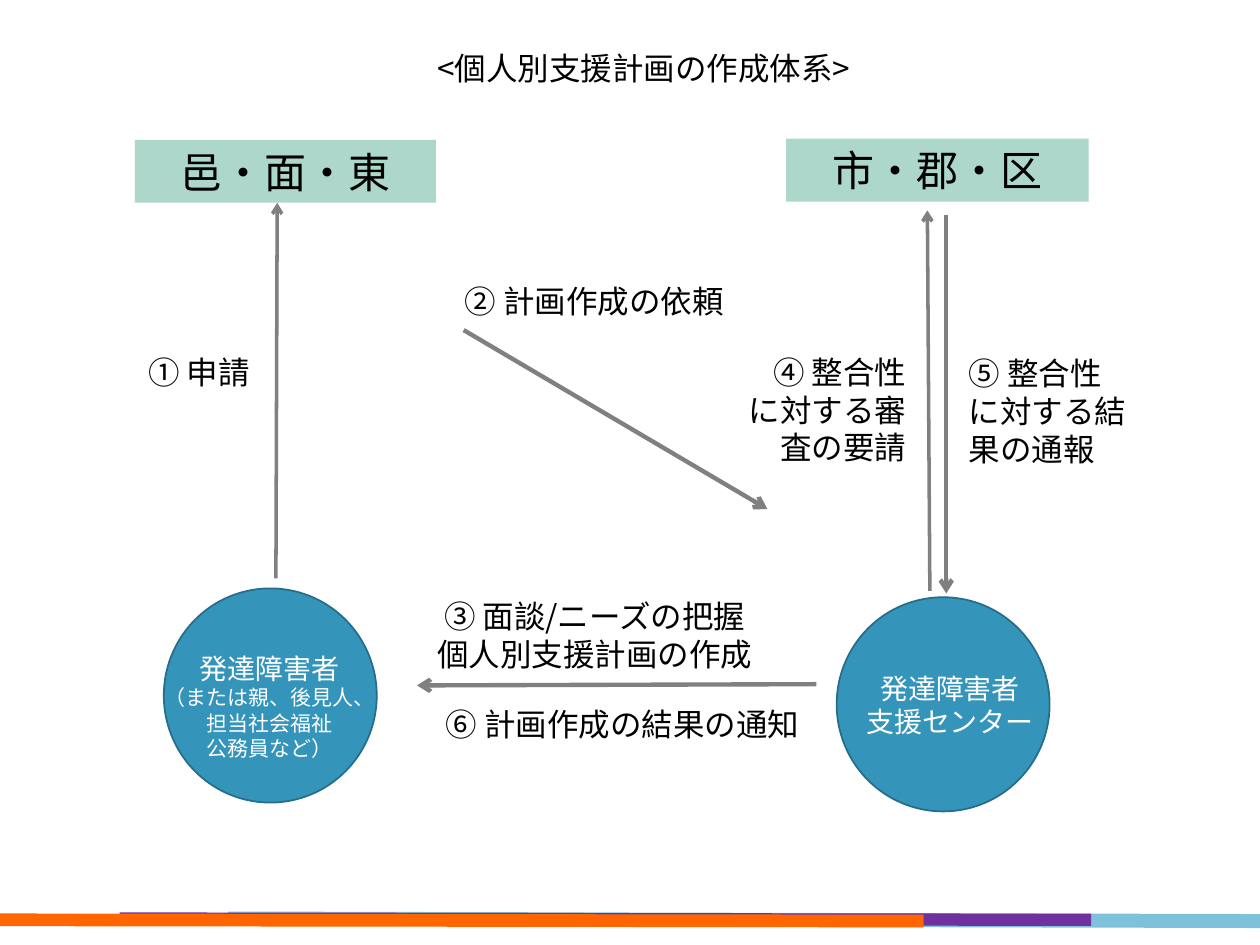
import pptx
import pptx.util
import pptx.dml.color
import pptx.enum.shapes
import pptx.enum.text
import pptx.oxml
import pptx.oxml.ns

PX = 9144
FONT = "Noto Sans CJK JP"
COLORS = {
    "ink": "000000", "paper": "FFFFFF", "arrow": "808080",
    "office": "ACD7CA", "person": "3494BA", "person_edge": "266D8A",
    "sky": "7FC1DB", "purple": "7030A0", "orange": "FF6600",
}
ALIGN = pptx.enum.text.PP_ALIGN
ANCHOR = pptx.enum.text.MSO_ANCHOR
SHAPE = pptx.enum.shapes.MSO_SHAPE


def rgb(name):
    return pptx.dml.color.RGBColor.from_string(COLORS[name])


def emu(*lengths):
    return [length * PX for length in lengths]


class Diagram:
    def __init__(self, slide):
        self.slide = slide

    def set_text(self, frame, lines, sizes, color="ink", align=ALIGN.CENTER, anchor=ANCHOR.TOP):
        frame.word_wrap = True
        frame.auto_size = pptx.enum.text.MSO_AUTO_SIZE.NONE
        frame.vertical_anchor = anchor
        frame.text = "\n".join(lines)
        for paragraph, size in zip(frame.paragraphs, sizes):
            paragraph.alignment = align
            paragraph.line_spacing = pptx.util.Pt(size * 1.2)
            for run in paragraph.runs:
                run.font.size = pptx.util.Pt(size)
                run.font.name = FONT
                run.font.color.rgb = rgb(color)
                east_asian = pptx.oxml.ns.qn("a:ea")
                run.font._element.get_or_add_latin().addnext(
                    run.font._element.makeelement(east_asian, {"typeface": FONT}))

    def title(self, box, wording):
        title = self.slide.shapes.title
        title.left, title.top, title.width, title.height = emu(*box)
        self.set_text(title.text_frame, [wording], [18])

    def label(self, box, lines, sizes=(18, 18), color="ink", align=ALIGN.CENTER):
        label = self.slide.shapes.add_textbox(*emu(*box))
        self.set_text(label.text_frame, lines, sizes, color, align)

    def block(self, kind, box, fill, edge=None):
        block = self.slide.shapes.add_shape(kind, *emu(*box))
        block.shadow.inherit = False
        block.fill.solid()
        block.fill.fore_color.rgb = rgb(fill)
        if edge:
            block.line.color.rgb = rgb(edge)
            block.line.width = pptx.util.Pt(1)
        else:
            block.line.fill.background()
        return block

    def office(self, box, name):
        office = self.block(SHAPE.RECTANGLE, box, "office")
        self.set_text(office.text_frame, [name], [24], anchor=ANCHOR.MIDDLE)

    def person(self, left, top):
        self.block(SHAPE.OVAL, (left, top, 169, 170), "person", "person_edge")

    def line(self, ends, color, width):
        line = self.slide.shapes.add_connector(
            pptx.enum.shapes.MSO_CONNECTOR.STRAIGHT, *emu(*ends))
        line.line.color.rgb = rgb(color)
        line.line.width = pptx.util.Pt(width)
        properties = line._element.spPr
        properties.append(properties.makeelement(pptx.oxml.ns.qn("a:effectLst"), {}))
        return line

    def arrow(self, ends, width=2.5):
        stroke = self.line(ends, "arrow", width).line._get_or_add_ln()
        stroke.append(stroke.makeelement(pptx.oxml.ns.qn("a:tailEnd"), {"type": "arrow"}))


def main():
    deck = pptx.Presentation()
    deck.slide_width, deck.slide_height = emu(1000, 750)
    diagram = Diagram(deck.slides.add_slide(deck.slide_layouts[5]))

    diagram.title((283, 34, 456, 40), "<個人別支援計画の作成体系>")

    diagram.line((181, 729, 1000, 731), "sky", 8)
    diagram.line((95, 729, 866, 730), "purple", 7)
    diagram.line((0, 730, 733, 731), "orange", 7.25)

    diagram.office((107, 111, 239, 50), "邑・面・東")
    diagram.office((624, 110, 240, 50), "市・郡・区")

    diagram.person(130, 467)
    diagram.person(664, 474)
    diagram.label((102, 512, 224, 98),
                  ["発達障害者", "（または親、後見人、", "担当社会福祉", "公務員など）"],
                  (16, 12, 12, 12), "paper")
    diagram.label((642, 528, 224, 64), ["発達障害者", "支援センター"], (16, 16), "paper")

    diagram.arrow((219, 459, 220, 161), 2)
    diagram.arrow((738, 469, 736, 167), 2)
    diagram.arrow((751, 171, 751, 471))
    diagram.arrow((368, 262, 609, 404))
    diagram.arrow((648, 543, 331, 544))

    diagram.label((82, 275, 126, 40), ["① 申請"], align=ALIGN.RIGHT)
    diagram.label((344, 219, 255, 40), ["② 計画作成の依頼"])
    diagram.label((316, 469, 312, 71), ["③ 面談/ニーズの把握", "個人別支援計画の作成"])
    diagram.label((582, 275, 147, 101), ["④ 整合性に対する審査の要請"], align=ALIGN.RIGHT)
    diagram.label((759, 276, 147, 101), ["⑤ 整合性に対する結果の通報"], align=ALIGN.LEFT)
    diagram.label((334, 555, 320, 40), ["⑥ 計画作成の結果の通知"])

    deck.save("out.pptx")


if __name__ == "__main__":
    main()
